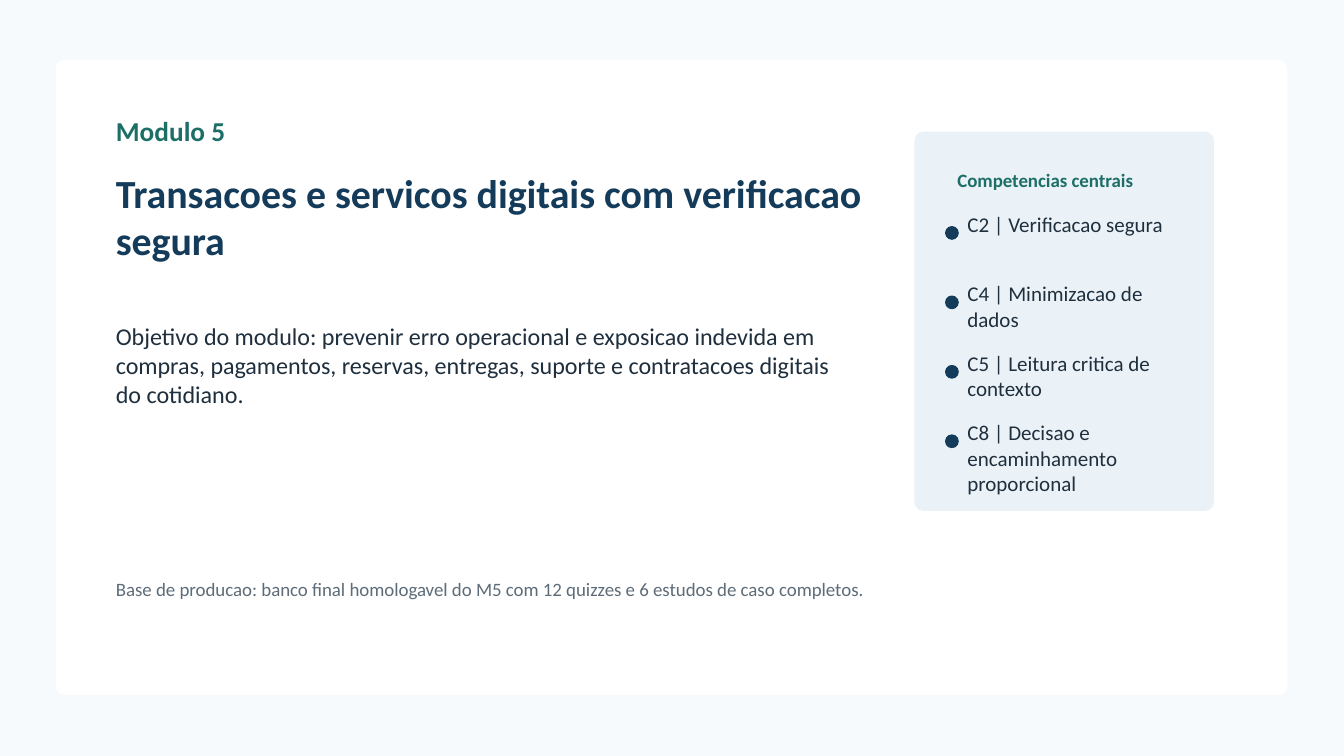
import pptx
import pptx.dml.color
import pptx.enum.shapes
import pptx.enum.text
import pptx.util

Cm = pptx.util.Cm
Pt = pptx.util.Pt
RGBColor = pptx.dml.color.RGBColor
MSO_SHAPE = pptx.enum.shapes.MSO_SHAPE

BACKGROUND = RGBColor(0xF7, 0xFA, 0xFC)
WHITE = RGBColor(0xFF, 0xFF, 0xFF)
PALE_BLUE = RGBColor(0xEA, 0xF2, 0xF7)
GREEN = RGBColor(0x1D, 0x6E, 0x67)
NAVY = RGBColor(0x14, 0x3C, 0x5A)
INK = RGBColor(0x1F, 0x2F, 0x3D)
GREY = RGBColor(0x5D, 0x6C, 0x78)

COMPETENCIAS = [
    "C2 | Verificacao segura",
    "C4 | Minimizacao de dados",
    "C5 | Leitura critica de contexto",
    "C8 | Decisao e encaminhamento proporcional",
]


class SlideBuilder:
    font = "Calibri"
    padding = (0.48, 0.38)

    def __init__(self, slide):
        self.slide = slide

    def background(self, color):
        fill = self.slide.background.fill
        fill.solid()
        fill.fore_color.rgb = color

    def shape(self, kind, left, top, width, height, color):
        sp = self.slide.shapes.add_shape(
            kind, Cm(left), Cm(top), Cm(width), Cm(height))
        sp.shadow.inherit = False
        sp.fill.solid()
        sp.fill.fore_color.rgb = color
        sp.line.color.rgb = color
        sp.line.width = Pt(0)
        return sp

    def panel(self, left, top, width, height, color, rounding):
        sp = self.shape(MSO_SHAPE.ROUNDED_RECTANGLE,
                        left, top, width, height, color)
        sp.adjustments[0] = rounding

    def dot(self, left, top, size, color):
        self.shape(MSO_SHAPE.OVAL, left, top, size, size, color)

    def text(self, text, left, top, width, height, size, color,
             bold=False, padding=padding):
        box = self.slide.shapes.add_textbox(
            Cm(left), Cm(top), Cm(width), Cm(height))
        tf = box.text_frame
        tf.word_wrap = True
        tf.vertical_anchor = pptx.enum.text.MSO_ANCHOR.TOP
        tf.margin_left = tf.margin_right = Cm(padding[0])
        tf.margin_top = tf.margin_bottom = Cm(padding[1])
        tf.text = text
        font = tf.paragraphs[0].runs[0].font
        font.name = self.font
        font.size = Pt(size)
        font.bold = bold
        font.color.rgb = color


def main():
    prs = pptx.Presentation()
    prs.slide_width, prs.slide_height = Cm(33.87), Cm(19.05)
    s = SlideBuilder(prs.slides.add_slide(prs.slide_layouts[6]))

    # Background and main card
    s.background(BACKGROUND)
    s.panel(1.42, 1.52, 31.01, 15.98, WHITE, 0.013)

    # Module heading and objective
    left = 2.44
    s.text("Modulo 5", left, 2.49, 4.78, 1.17, 19.5, GREEN, bold=True)
    s.text("Transacoes e servicos digitais com verificacao segura",
           left, 3.86, 20.12, 3.12, 28.5, NAVY, bold=True)
    s.text("Objetivo do modulo: prevenir erro operacional e exposicao "
           "indevida em compras, pagamentos, reservas, entregas, suporte e "
           "contratacoes digitais do cotidiano.",
           left, 7.72, 19.05, 2.49, 17.2, INK)

    # Competency panel
    s.panel(23.06, 3.33, 7.52, 9.53, PALE_BLUE, 0.028)
    s.text("Competencias centrais", 23.65, 3.96, 6.35, 0.79, 13.5, GREEN,
           bold=True)
    for i, competencia in enumerate(COMPETENCIAS):
        top = 5.33 + 1.75 * i
        s.dot(23.83, top + 0.38, 0.32, NAVY)
        s.text(competencia, 24.38, top, 5.03, 1.52, 15, INK, padding=(0, 0))

    # Footnote
    s.text("Base de producao: banco final homologavel do M5 com 12 quizzes "
           "e 6 estudos de caso completos.",
           left, 14.27, 24.87, 1.47, 13.5, GREY)

    prs.save("out.pptx")


if __name__ == "__main__":
    main()
